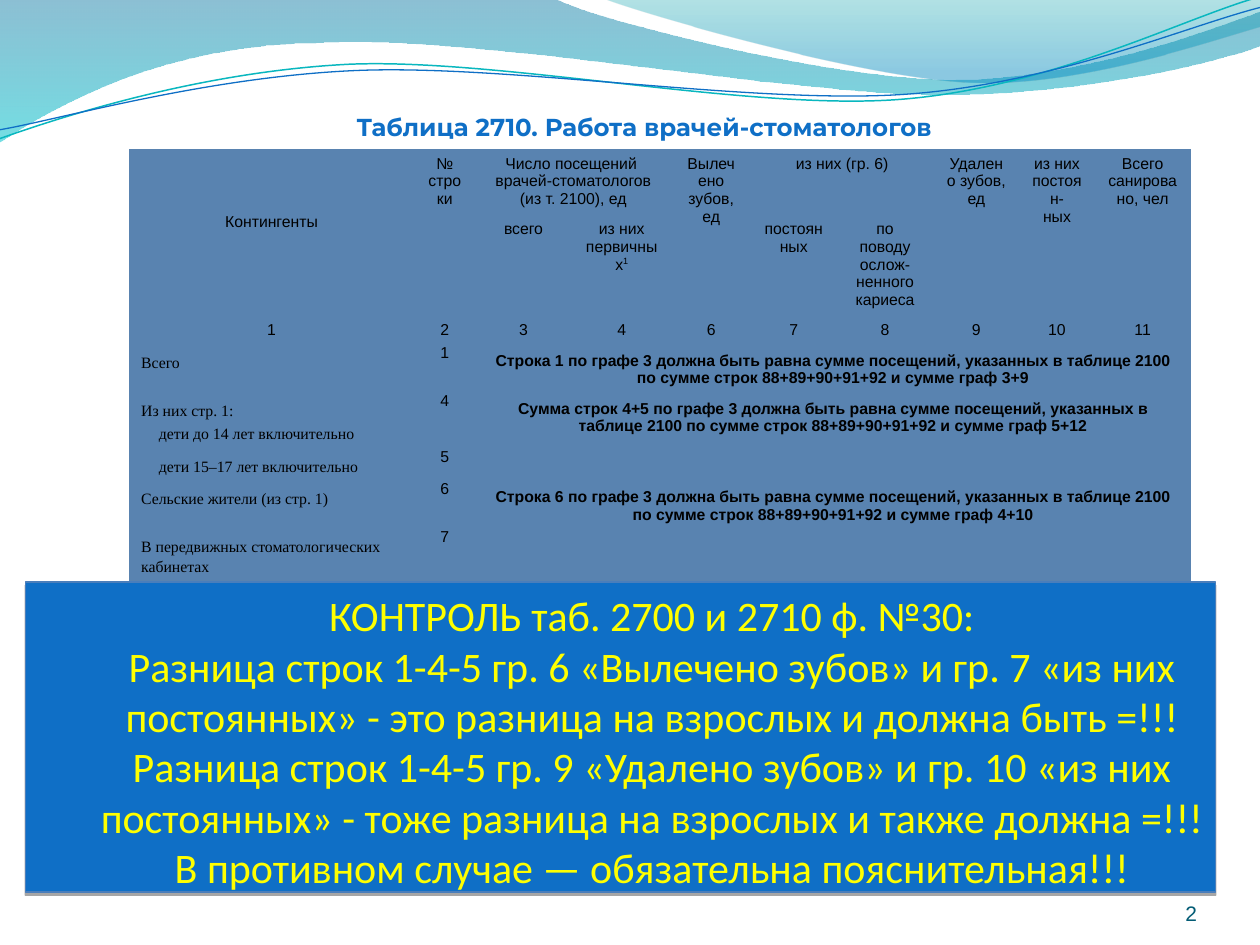
from dataclasses import dataclass, field
from math import cos, radians, sin
from typing import Any

from lxml import etree
from pptx import Presentation
from pptx.dml.color import RGBColor
from pptx.enum.shapes import MSO_SHAPE
from pptx.enum.text import MSO_ANCHOR, MSO_AUTO_SIZE, PP_ALIGN
from pptx.oxml.ns import qn
from pptx.util import Inches, Pt

LEFT, CENTER, RIGHT = PP_ALIGN.LEFT, PP_ALIGN.CENTER, PP_ALIGN.RIGHT
TOP, BOTTOM = MSO_ANCHOR.TOP, MSO_ANCHOR.BOTTOM
NO_GRID_STYLE = "{2D5ABB26-0587-4C30-8999-92F81FD0307C}"


@dataclass(frozen=True)
class Theme:
    blue: str = "0F6FC6"
    teal: str = "09B7BF"
    cell: str = "5983B0"
    box_line: str = "4A7EBB"
    yellow: str = "FFFF00"
    black: str = "000000"
    page: str = "035C75"
    title_size: float = 14
    table_size: float = 9
    box_size: float = 24
    page_size: float = 12


THEME = Theme()


@dataclass(frozen=True)
class Wave:
    start: tuple[float, float]
    segments: list[tuple[float, ...]]  # two numbers: line, six: cubic curve
    stops: list[tuple[float, str, int]] = field(default_factory=list)  # position, colour, opacity
    angle: float = 0
    line: tuple[str, float] | None = None
    rotation: float = 0


@dataclass(frozen=True)
class Entry:
    row: int
    col: int
    text: str
    rows: int = 1
    cols: int = 1
    bold: bool = False
    font: str = "Arial"
    align: Any = CENTER
    layout: dict[str, Any] = field(default_factory=dict)
    top: float = 0.05
    superscript: str = ""


def apply(target: Any, values: dict[str, Any]) -> None:
    for name, value in values.items():
        setattr(target, name, value)


def write(paragraph: Any, text: str, font: str, size: float, color: str,
          bold: bool = False, layout: dict[str, Any] | None = None) -> None:
    paragraph.text = text.replace("\n", "\v")
    apply(paragraph, layout or {})
    for run in paragraph.runs:
        apply(run.font, {"name": font, "size": Pt(size), "bold": bold})
        run.font.color.rgb = RGBColor.from_string(color)
    for line_break in paragraph._p.findall(qn("a:br")):
        etree.SubElement(line_break, qn("a:rPr")).set("sz", str(int(size * 100)))


def indent(paragraph: Any, left: float, first: float) -> None:
    properties = paragraph._p.get_or_add_pPr()
    properties.set("marL", str(Inches(left)))
    properties.set("indent", str(Inches(first)))


def frame(text_frame: Any, anchor: Any, inset: float) -> None:
    sides = ("margin_left", "margin_top", "margin_right", "margin_bottom")
    apply(text_frame, {side: Inches(inset) for side in sides} | {
        "word_wrap": True, "auto_size": MSO_AUTO_SIZE.NONE, "vertical_anchor": anchor})


def bend(shape: Any, segments: list[tuple[float, ...]]) -> None:
    """Join each three straight steps of a six-number segment into one cubic curve."""
    steps = iter(list(shape._element.iter(qn("a:lnTo"))))
    for segment in segments:
        curve = next(steps)
        if len(segment) == 6:
            curve.tag = qn("a:cubicBezTo")
            for step in (next(steps), next(steps)):
                curve.append(step[0])
                step.getparent().remove(step)


def draw_wave(shapes: Any, wave: Wave) -> None:
    # Outline is laid out level, then turned back by the rotation of the shape
    turn = complex(cos(radians(wave.rotation)), -sin(radians(wave.rotation)))
    numbers = [n for segment in (wave.start, *wave.segments) for n in segment]
    level = [complex(x, y) * turn for x, y in zip(numbers[::2], numbers[1::2])]
    start, *rest = [(Inches(z.real), Inches(z.imag)) for z in level]
    builder = shapes.build_freeform(*start)
    builder.add_line_segments(rest, close=bool(wave.stops))
    shape = builder.convert_to_shape()
    bend(shape, wave.segments)
    center = complex(shape.left + shape.width / 2, shape.top + shape.height / 2) / turn
    apply(shape, {"left": round(center.real - shape.width / 2),
                  "top": round(center.imag - shape.height / 2), "rotation": wave.rotation})
    shape.shadow.inherit = False
    if wave.line:
        shape.fill.background()
        shape.line.color.rgb = RGBColor.from_string(wave.line[0])
        shape.line.width = Pt(wave.line[1])
        return
    shape.line.fill.background()
    shape.fill.gradient()
    shape.fill.gradient_angle = 360 - wave.angle
    for stop, (position, color, opacity) in zip(shape.fill.gradient_stops, wave.stops):
        stop.position = position
        stop.color.rgb = RGBColor.from_string(color)
        etree.SubElement(stop._gs[0], qn("a:alpha")).set("val", str(opacity * 1000))


def draw_entry(table: Any, entry: Entry) -> None:
    cell = table.cell(entry.row, entry.col)
    if entry.rows * entry.cols > 1:
        cell.merge(table.cell(entry.row + entry.rows - 1, entry.col + entry.cols - 1))
    cell.margin_top = Inches(entry.top)
    paragraph = cell.text_frame.paragraphs[0]
    style = (entry.font, THEME.table_size, THEME.black, entry.bold)
    for number, line in enumerate(entry.text.split("\r")):
        if number:
            paragraph = cell.text_frame.add_paragraph()
        write(paragraph, line, *style, {"alignment": entry.align} | entry.layout)
        if line.startswith(" "):
            indent(paragraph, 0.45, -0.34)
    if entry.superscript:
        run = paragraph.add_run()
        run.text = entry.superscript
        apply(run.font, {"name": entry.font, "size": Pt(THEME.table_size)})
        run.font.color.rgb = RGBColor.from_string(THEME.black)
        run.font._element.set("baseline", "33000")


WAVES = [
    Wave((0, -0.01), [(4.4, -0.01), (4.76, 0.17, 6.63, 0.63, 7.58, 0.63),
                      (8.53, 0.63, 9.58, 0.25, 10, 0.09), (10.01, 0.36),
                      (9.83, 0.44, 8.7, 0.75, 7.46, 0.75), (6.22, 0.75, 3.82, 0.28, 2.57, 0.34),
                      (1.29, 0.35, 0.46, 0.83, -0.01, 1.13), (0, -0.01)],
         [(0, "0074A0", 45), (1, "00C4CD", 55)], 90),
    Wave((4.79, -0.01), [(5.09, 0.11, 6.82, 0.61, 7.69, 0.65),
                         (8.55, 0.69, 9.61, 0.32, 10, 0.21), (10, 0), (4.79, -0.01)],
         [(0.2, "008ABF", 45), (1, "00A0A8", 30)], 270),
    Wave((0, 1.1), [(0.48, 0.93, 1.58, 0.57, 2.77, 0.51), (3.96, 0.46, 5.93, 0.88, 7.13, 0.79),
                    (8.33, 0.7, 9.38, 0.15, 9.98, -0.02)],
         line=(THEME.teal, 0.85), rotation=357.3),
    Wave((0, 1.03), [(0.47, 0.95, 1.64, 0.61, 2.83, 0.56), (4.03, 0.51, 5.97, 0.83, 7.17, 0.75),
                     (8.36, 0.67, 9.41, 0.21, 10, 0.06)],
         line=(THEME.blue, 0.75), rotation=357.3),
]

COLUMNS = [2.27, 0.48, 0.77, 0.79, 0.63, 0.68, 0.77, 0.68, 0.6, 0.76]
ROWS = [0.52, 0.8, 0.24, 0.38, 0.44, 0.26, 0.38, 0.42]
HEADERS = [
    Entry(0, 0, "Контингенты", rows=2, top=0.51),
    Entry(0, 1, "№\nстроки", rows=2),
    Entry(0, 2, "Число посещений \nврачей-стоматологов (из т. 2100), ед", cols=2),
    Entry(0, 4, "Вылечено зубов, ед", rows=2),
    Entry(0, 5, "из них (гр. 6)", cols=2),
    Entry(0, 7, "Удалено зубов, ед", rows=2),
    Entry(0, 8, "из них\nпостоян-\nных", rows=2),
    Entry(0, 9, "Всего санировано, чел", rows=2),
    Entry(1, 2, "всего"),
    Entry(1, 3, "из них\nпервичных", superscript="1"),
    Entry(1, 5, "постоянных"),
    Entry(1, 6, "по поводу ослож-ненного кариеса"),
]
COLUMN_NUMBERS = [1, 2, 3, 4, 6, 7, 8, 9, 10, 11]
GROUPS = [("Всего", 1), ("Из них стр. 1:\r дети до 14 лет включительно", 4),
          (" дети 15–17 лет включительно", 5), ("Сельские жители (из стр. 1)", 6),
          ("В передвижных стоматологических кабинетах", 7)]
RULE = ("{} по графе 3 должна быть равна сумме посещений, указанных в таблице 2100 "
        "по сумме строк 88+89+90+91+92 и сумме граф {}")
RULES = [(3, 1, "Строка 1", "3+9"), (4, 2, "Сумма строк 4+5", "5+12"), (6, 1, "Строка 6", "4+10")]
CONTROL = (
    "КОНТРОЛЬ таб. 2700 и 2710 ф. №30:\n"
    "Разница строк 1-4-5 гр. 6 «Вылечено зубов» и гр. 7 «из них постоянных» - "
    "это разница на взрослых и должна быть =!!!\n"
    "Разница строк 1-4-5 гр. 9 «Удалено зубов» и гр. 10 «из них постоянных» - "
    "тоже разница на взрослых и также должна =!!!\n"
    "В противном случае — обязательна пояснительная!!!")


def table_entries() -> list[Entry]:
    before = {"space_before": Pt(1.7)}
    entries = HEADERS + [Entry(2, col, str(n)) for col, n in enumerate(COLUMN_NUMBERS)]
    for row, (group, number) in enumerate(GROUPS, start=3):
        spacing = {} if number in (4, 5) else before
        entries += [Entry(row, 0, group, font="Times New Roman", align=LEFT,
                          layout=before | {"line_spacing": 1.15}),
                    Entry(row, 1, str(number), layout=spacing | {"line_spacing": Pt(5.7)})]
    return entries + [Entry(row, 2, RULE.format(subject, columns), rows, 8, True, layout=before)
                      for row, rows, subject, columns in RULES]


def draw_table(shapes: Any) -> None:
    table = shapes.add_table(len(ROWS), len(COLUMNS), Inches(1.02), Inches(1.18),
                             Inches(sum(COLUMNS)), Inches(sum(ROWS))).table
    apply(table, {"first_row": False, "horz_banding": False})
    table._tbl.tblPr.find(qn("a:tableStyleId")).text = NO_GRID_STYLE
    for column, width in zip(table.columns, COLUMNS):
        column.width = Inches(width)
    for row, height in zip(table.rows, ROWS):
        row.height = Inches(height)
    for cell in table.iter_cells():
        cell.fill.solid()
        cell.fill.fore_color.rgb = RGBColor.from_string(THEME.cell)
    for entry in table_entries():
        draw_entry(table, entry)


def draw_control(shapes: Any) -> None:
    control = shapes.add_shape(MSO_SHAPE.RECTANGLE, Inches(0.2), Inches(4.62),
                               Inches(9.45), Inches(2.46))
    control.fill.solid()
    control.fill.fore_color.rgb = RGBColor.from_string(THEME.blue)
    control.line.color.rgb = RGBColor.from_string(THEME.box_line)
    control.line.width = Pt(0.75)
    control.shadow.inherit = False
    effects = control._element.spPr.find(qn("a:effectLst"))
    shadow = etree.SubElement(effects, qn("a:outerShdw"), blurRad="0", dist=str(Pt(1.8)),
                              dir="5400000", rotWithShape="0")
    shade = etree.SubElement(shadow, qn("a:srgbClr"), val=THEME.black)
    etree.SubElement(shade, qn("a:alpha"), val="35000")
    frame(control.text_frame, BOTTOM, 0)
    paragraph = control.text_frame.paragraphs[0]
    write(paragraph, CONTROL, "Calibri", THEME.box_size, THEME.yellow, layout={"alignment": CENTER})
    indent(paragraph, 0.5, 0)


def main() -> None:
    deck = Presentation()
    apply(deck, {"slide_width": Inches(10), "slide_height": Inches(7.5)})
    slide = deck.slides.add_slide(deck.slide_layouts[5])
    # Wave decoration
    for wave in WAVES:
        draw_wave(slide.shapes, wave)
    # Title
    title = slide.shapes.title
    apply(title, {"left": Inches(0.98), "top": Inches(0.79),
                  "width": Inches(8.27), "height": Inches(0.39)})
    frame(title.text_frame, TOP, 0.1)
    write(title.text_frame.paragraphs[0], "Таблица 2710. Работа врачей-стоматологов",
          "Montserrat", THEME.title_size, THEME.blue, True, {"alignment": CENTER})
    # Table and control note
    draw_table(slide.shapes)
    draw_control(slide.shapes)
    # Page number
    page = slide.shapes.add_textbox(Inches(8.67), Inches(6.95), Inches(0.83), Inches(0.4))
    frame(page.text_frame, BOTTOM, 0)
    write(page.text_frame.paragraphs[0], "2", "Arial", THEME.page_size, THEME.page,
          layout={"alignment": RIGHT})
    deck.save("out.pptx")


if __name__ == "__main__":
    main()
